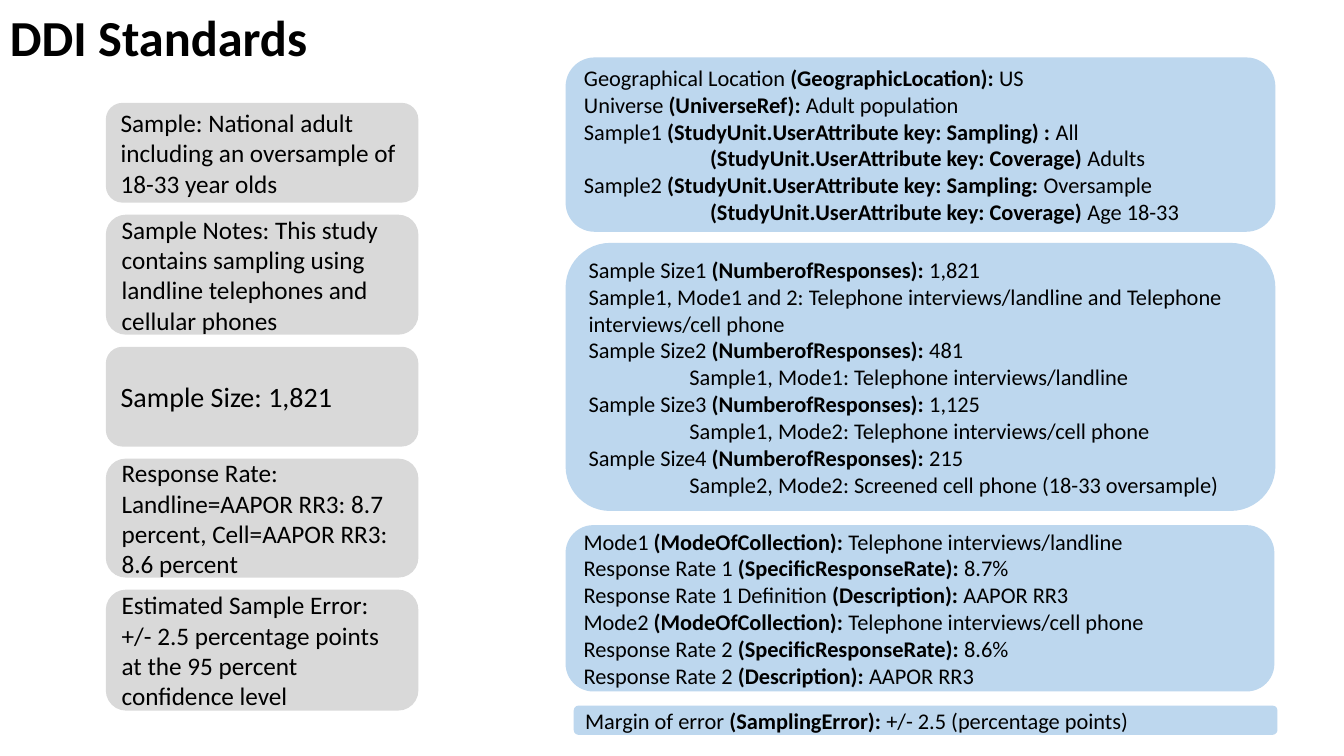
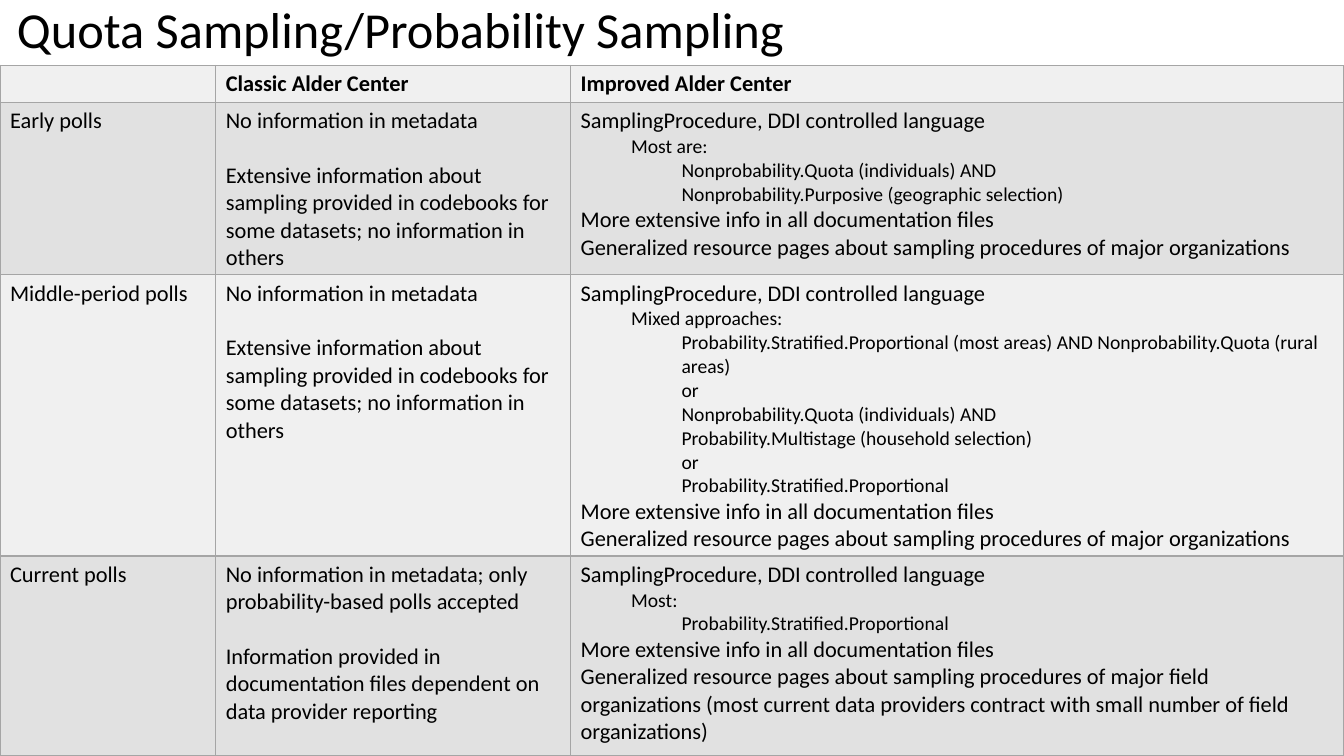
import pptx
import pptx.dml.color
import pptx.enum.shapes
import pptx.enum.text
import pptx.util
from lxml import etree
from pptx.util import Inches

COLORS = {"text": "000000", "blue": "BDD7EE", "grey": "D9D9D9",
          "light": "F0F0F0", "dark": "E1E1E1", "border": "A5A5A5"}
FONT = "Calibri"
NS = "http://schemas.openxmlformats.org/drawingml/2006/main"
ANCHOR = pptx.enum.text.MSO_ANCHOR


def rgb(name):
    return pptx.dml.color.RGBColor.from_string(COLORS[name])


class Deck:
    """Holds the style and the current slide."""

    def __init__(self):
        self.prs = pptx.Presentation()
        self.prs.slide_width, self.prs.slide_height = Inches(13.33), Inches(7.5)

    def slide(self):
        self.s = self.prs.slides.add_slide(self.prs.slide_layouts[6])

    def add_text(self, tf, lines, size, sub_size=None, bold=False, **para_format):
        """Each line is text or (indent, text); text between asterisks is bold."""
        tf.word_wrap = True
        for i, line in enumerate(lines):
            indent, text = line if isinstance(line, tuple) else (0, line)
            pts = pptx.util.Pt(sub_size if indent and sub_size else size)
            p = tf.paragraphs[0] if i == 0 else tf.add_paragraph()
            p.alignment = pptx.enum.text.PP_ALIGN.LEFT
            for key, value in para_format.items():
                if key != "space_before" or i:
                    setattr(p, key, value)
            if indent:
                p._p.get_or_add_pPr().set("marL", str(Inches(indent)))
            if not text:
                p._p.get_or_add_endParaRPr().set("sz", str(int(pts.pt * 100)))
                continue
            for n, part in enumerate(text.split("*")):
                if not part:
                    continue
                r = p.add_run()
                r.text = part
                font = {"name": FONT, "size": pts, "bold": bold or n % 2 == 1}
                for key, value in font.items():
                    setattr(r.font, key, value)
                r.font.color.rgb = rgb("text")

    def title(self, text, x, y, w, h, **fmt):
        tf = self.s.shapes.add_textbox(*map(Inches, (x, y, w, h))).text_frame
        tf.vertical_anchor = ANCHOR.BOTTOM
        self.add_text(tf, [text], 36, **fmt)

    def box(self, lines, x, y, w, h, color, size):
        sp = self.s.shapes.add_shape(
            pptx.enum.shapes.MSO_SHAPE.ROUNDED_RECTANGLE, *map(Inches, (x, y, w, h)))
        sp.shadow.inherit = False
        sp.fill.solid()
        sp.fill.fore_color.rgb = rgb(color)
        sp.line.fill.background()
        sp.text_frame.vertical_anchor = ANCHOR.MIDDLE
        self.add_text(sp.text_frame, lines, size)

    def style_cell(self, cell, color):
        tc_pr = cell._tc.get_or_add_tcPr()
        for side in ("lnL", "lnR", "lnT", "lnB"):
            ln = etree.SubElement(tc_pr, f"{{{NS}}}{side}", w=str(pptx.util.Pt(1)))
            fill = etree.SubElement(ln, f"{{{NS}}}solidFill")
            etree.SubElement(fill, f"{{{NS}}}srgbClr", val=COLORS["border"])
        cell.fill.solid()
        cell.fill.fore_color.rgb = rgb(color)

    def table(self, rows, x, y, widths, heights):
        frame = self.s.shapes.add_table(
            len(rows), len(widths),
            *map(Inches, (x, y, sum(widths), sum(heights))))
        for col, width in zip(frame.table.columns, widths):
            col.width = Inches(width)
        for i, (row, height) in enumerate(zip(rows, heights)):
            frame.table.rows[i].height = Inches(height)
            for j, lines in enumerate(row):
                cell = frame.table.cell(i, j)
                self.style_cell(cell, "dark" if i % 2 else "light")
                # The middle column sets its paragraphs one line apart
                gap = {"space_before": pptx.util.Pt(19.5)} if j == 1 else {}
                self.add_text(cell.text_frame, lines, 16, 14, bold=i == 0, **gap)


# Slide 1 content: (height, size, text) for survey notes
NOTES = [
    (0.99, 18, "Sample: National adult including an oversample of 18-33 year olds"),
    (1.19, 18, "Sample Notes: This study contains sampling using landline telephones "
               "and cellular phones"),
    (0.99, 20, "Sample Size: 1,821"),
    (1.18, 18, "Response Rate: Landline=AAPOR RR3: 8.7 percent, Cell=AAPOR RR3: 8.6 percent"),
    (1.2, 18, "Estimated Sample Error: +/- 2.5 percentage points at the 95 percent "
              "confidence level"),
]
# (left, top, width, height, lines) for the matching DDI fields
FIELDS = [
    (5.61, 0.57, 7.04, 1.73, [
        "Geographical Location *(GeographicLocation): *US",
        "Universe *(UniverseRef): *Adult population",
        "Sample1* (StudyUnit.UserAttribute key: Sampling) : *All",
        (1.25, "*(StudyUnit.UserAttribute key: Coverage) *Adults"),
        "Sample2 *(StudyUnit.UserAttribute key: Sampling: *Oversample",
        (1.25, "*(StudyUnit.UserAttribute key: Coverage)* Age 18-33")]),
    (5.61, 2.41, 7.04, 2.66, [
        "Sample Size1 *(NumberofResponses): *1,821",
        "Sample1, Mode1 and 2: Telephone interviews/landline and Telephone "
        "interviews/cell phone",
        "Sample Size2 *(NumberofResponses): *481",
        (1, "Sample1, Mode1: Telephone interviews/landline"),
        "Sample Size3 *(NumberofResponses): *1,125",
        (1, "Sample1, Mode2: Telephone interviews/cell phone"),
        "Sample Size4 *(NumberofResponses): *215",
        (1, "Sample2, Mode2: Screened cell phone (18-33 oversample)")]),
    (5.61, 5.21, 7.03, 1.65, [
        "Mode1* (ModeOfCollection): *Telephone interviews/landline",
        "Response Rate 1 *(SpecificResponseRate): *8.7%",
        "Response Rate 1 Definition *(Description):* AAPOR RR3",
        "Mode2* (ModeOfCollection): *Telephone interviews/cell phone",
        "Response Rate 2 *(SpecificResponseRate): *8.6%",
        "Response Rate 2 *(Description):* AAPOR RR3"]),
    (5.69, 7, 6.98, 0.29, [
        "Margin of error *(SamplingError): *+/- 2.5 (percentage points)"]),
]

# Slide 2 content
NO_INFO = "No information in metadata"
CODEBOOKS = ("Extensive information about sampling provided in codebooks for some "
             "datasets; no information in others")
PROCEDURE = "SamplingProcedure, DDI controlled language"
MORE_INFO = "More extensive info in all documentation files"
RESOURCES = "Generalized resource pages about sampling procedures of major "
POLLS = [
    [[""], ["Classic Alder Center"], ["Improved Alder Center"]],
    [["Early polls"], [NO_INFO, CODEBOOKS], [
        PROCEDURE,
        (0.5, "Most are:"),
        (1, "Nonprobability.Quota (individuals) AND"),
        (1, "Nonprobability.Purposive (geographic selection)"),
        MORE_INFO, RESOURCES + "organizations"]],
    [["Middle-period polls"], [NO_INFO, CODEBOOKS], [
        PROCEDURE,
        (0.5, "Mixed approaches:"),
        (1, "Probability.Stratified.Proportional (most areas) AND "
            "Nonprobability.Quota (rural areas)"),
        (1, "or"),
        (1, "Nonprobability.Quota (individuals) AND"),
        (1, "Probability.Multistage (household selection)"),
        (1, "or"),
        (1, "Probability.Stratified.Proportional"),
        MORE_INFO, RESOURCES + "organizations"]],
    [["Current polls"], [
        NO_INFO + "; only probability-based polls accepted",
        "Information provided in documentation files dependent on data provider "
        "reporting"], [
        PROCEDURE,
        (0.5, "Most:"),
        (1, "Probability.Stratified.Proportional"),
        MORE_INFO,
        RESOURCES + "field organizations (most current data providers contract with "
        "small number of field organizations)"]],
]


def main():
    deck = Deck()

    # Slide 1: survey notes on the left, DDI fields on the right
    deck.slide()
    deck.title("DDI Standards", 0, 0, 4.93, 0.71, bold=True)
    top, gap = 1.02, 0.12
    for height, size, text in NOTES:
        deck.box([text], 1.05, top, 3.1, height, "grey", size)
        top += height + gap
    for x, y, w, h, lines in FIELDS:
        deck.box(lines, x, y, w, h, "blue", 16)

    # Slide 2: comparison table
    deck.slide()
    deck.title("Quota Sampling/Probability Sampling", 0.07, 0.09, 12.95, 0.55,
               line_spacing=0.9)
    deck.table(POLLS, 0, 0.65, [2.14, 3.52, 7.67], [0.36, 1.71, 2.79, 1.98])

    deck.prs.save("out.pptx")


if __name__ == "__main__":
    main()
